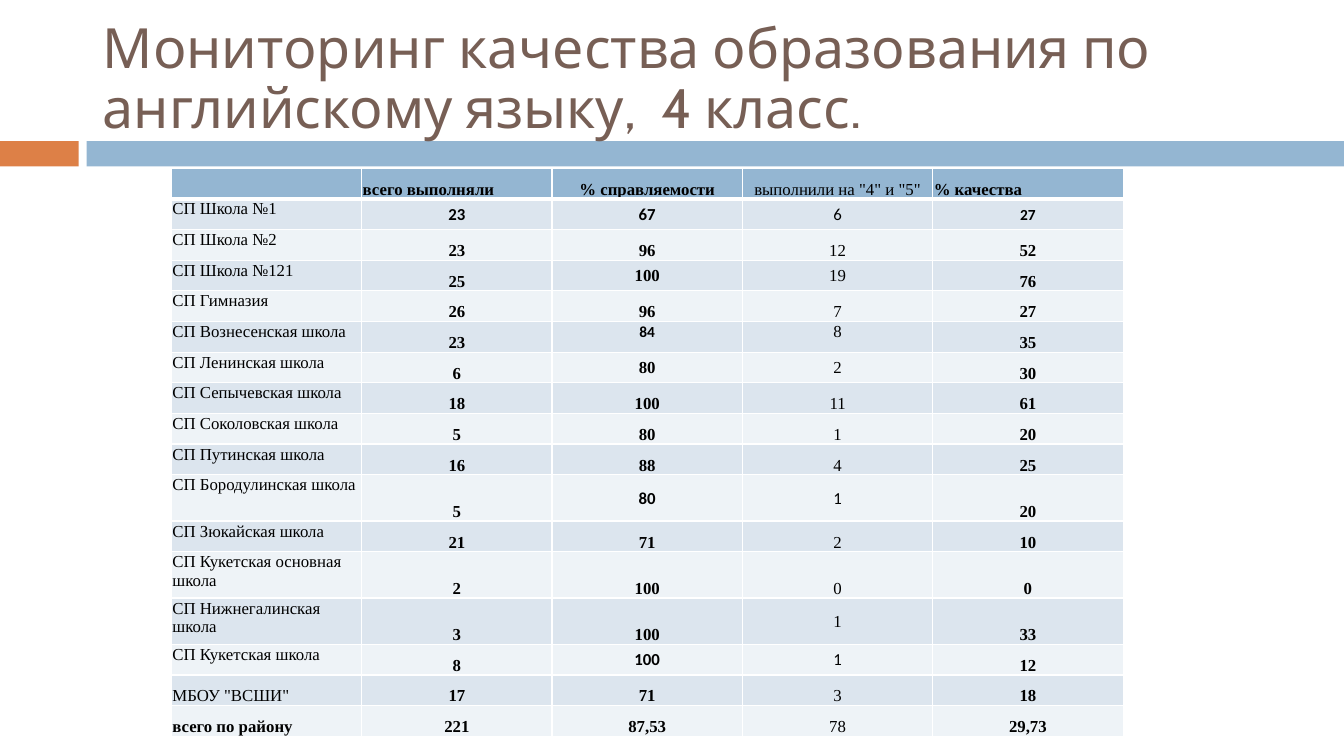
from dataclasses import dataclass, field

from lxml.etree import SubElement
from pptx import Presentation
from pptx.dml.color import RGBColor
from pptx.enum.shapes import MSO_SHAPE
from pptx.enum.text import MSO_ANCHOR, MSO_AUTO_SIZE, PP_ALIGN
from pptx.oxml.ns import qn
from pptx.slide import Slide
from pptx.table import _Cell
from pptx.util import Inches, Pt

ORANGE = RGBColor(0xDD, 0x80, 0x47)
BLUE = RGBColor(0x94, 0xB6, 0xD2)
BROWN = RGBColor(0x77, 0x5F, 0x55)
BLACK = RGBColor(0, 0, 0)
BAND_DARK = RGBColor(0xDC, 0xE5, 0xEE)
BAND_LIGHT = RGBColor(0xEE, 0xF3, 0xF7)
WHITE = RGBColor(0xFF, 0xFF, 0xFF)

SERIF, SANS = "Times New Roman", "Calibri"
TOP, MIDDLE, BOTTOM = MSO_ANCHOR.TOP, MSO_ANCHOR.MIDDLE, MSO_ANCHOR.BOTTOM
TABLE_W, TABLE_H, TALL_ROW = 9.44, 5.64, 0.46
PLAIN_COLUMN = 3


@dataclass(frozen=True)
class Style:
    anchor: MSO_ANCHOR = BOTTOM
    font: str = SERIF
    size: int = 12
    bold: bool = True
    align: PP_ALIGN = PP_ALIGN.CENTER


@dataclass(frozen=True)
class School:
    name: str
    values: tuple[str, ...]
    tall: bool = False
    styles: dict[int, Style] = field(default_factory=dict)


NAME = Style(TOP, bold=False, align=PP_ALIGN.LEFT)
CENTRE = Style(MIDDLE)
CENTRE_SANS = Style(MIDDLE, SANS)
MIDDLE_PAIR = {2: CENTRE, 3: CENTRE}
SANS_PAIR = {2: CENTRE_SANS, 3: CENTRE_SANS}
JUSTIFIED = Style(align=PP_ALIGN.JUSTIFY)

HEADER = School("", ("всего выполняли", "% справляемости", 'выполнили на "4" и "5"', "% качества"),
                styles={1: JUSTIFIED, 4: JUSTIFIED})
SCHOOLS = [
    School("СП Школа №1", ("23", "67", "6", "27"),
           styles={1: CENTRE_SANS, **SANS_PAIR, 4: Style(MIDDLE, SANS, 11)}),
    School("СП Школа №2", ("23", "96", "12", "52")),
    School("СП Школа №121", ("25", "100", "19", "76"), styles=MIDDLE_PAIR),
    School("СП Гимназия", ("26", "96", "7", "27")),
    School("СП Вознесенская школа", ("23", "84", "8", "35"),
           styles={2: Style(TOP, SANS, 11), 3: Style(TOP)}),
    School("СП Ленинская школа", ("6", "80", "2", "30"), styles=MIDDLE_PAIR),
    School("СП Сепычевская школа", ("18", "100", "11", "61")),
    School("СП Соколовская школа", ("5", "80", "1", "20")),
    School("СП Путинская школа", ("16", "88", "4", "25")),
    School("СП Бородулинская школа", ("5", "80", "1", "20"), tall=True, styles=SANS_PAIR),
    School("СП Зюкайская школа", ("21", "71", "2", "10")),
    School("СП Кукетская основная школа", ("2", "100", "0", "0"), tall=True),
    School("СП Нижнегалинская школа", ("3", "100", "1", "33"), tall=True, styles={3: CENTRE}),
    School("СП Кукетская школа", ("8", "100", "1", "12"), styles=SANS_PAIR),
    School('МБОУ "ВСШИ"', ("17", "71", "3", "18"),
           styles={0: Style(bold=False, align=PP_ALIGN.LEFT)}),
    School("всего по району", ("221", "87,53", "78", "29,73"),
           styles={0: Style(align=PP_ALIGN.LEFT)}),
]


def add_bar(s: Slide, left: float, width: float, color: RGBColor) -> None:
    sp = s.shapes.add_shape(MSO_SHAPE.RECTANGLE, Inches(left), Inches(1.4), Inches(width), Inches(0.25))
    sp.shadow.inherit = False
    sp.fill.solid()
    sp.fill.fore_color.rgb = color
    sp.line.fill.background()


def set_title(s: Slide, text: str) -> None:
    title = s.shapes.title
    title.left, title.top, title.width, title.height = map(Inches, (0.92, 0.25, 11.5, 1.1))
    tf = title.text_frame
    tf.word_wrap = True
    tf.auto_size = MSO_AUTO_SIZE.NONE
    tf.vertical_anchor = MIDDLE
    p = tf.paragraphs[0]
    p.alignment = PP_ALIGN.LEFT
    p.line_spacing = 0.9
    r = p.add_run()
    r.text = text
    r.font.name, r.font.size = "Cabin", Pt(39.6)
    r.font.color.rgb = BROWN


def set_borders(cell: _Cell, row: int) -> None:
    """White 1 pt grid with a 3 pt line under the header."""
    tc_pr = cell._tc.get_or_add_tcPr()
    widths = {"L": 1, "R": 1, "T": 3 if row == 1 else 1, "B": 3 if row == 0 else 1}
    for side, width in widths.items():
        line = SubElement(tc_pr, qn(f"a:ln{side}"), w=str(Pt(width)))
        fill = SubElement(line, qn("a:solidFill"))
        SubElement(fill, qn("a:srgbClr"), val=str(WHITE))


def fill_cell(cell: _Cell, text: str, style: Style, bold: bool, color: RGBColor) -> None:
    cell.fill.solid()
    cell.fill.fore_color.rgb = color
    cell.margin_left = cell.margin_right = cell.margin_top = Inches(0.01)
    cell.margin_bottom = 0
    cell.vertical_anchor = style.anchor
    p = cell.text_frame.paragraphs[0]
    p.alignment = style.align
    if not text:
        SubElement(p._p, qn("a:endParaRPr"), sz=str(style.size * 100))
        return
    r = p.add_run()
    r.text = text
    r.font.name, r.font.size, r.font.bold = style.font, Pt(style.size), bold
    r.font.color.rgb = BLACK


def add_results(s: Slide) -> None:
    records = [HEADER, *SCHOOLS]
    columns = 1 + len(HEADER.values)
    tall_count = sum(rec.tall for rec in records)
    row_height = (TABLE_H - tall_count * TALL_ROW) / (len(records) - tall_count)
    table = s.shapes.add_table(len(records), columns, Inches(1.7), Inches(1.67),
                               Inches(TABLE_W), Inches(TABLE_H)).table
    for column in table.columns:
        column.width = Inches(TABLE_W / columns)
    for i, rec in enumerate(records):
        table.rows[i].height = Inches(TALL_ROW if rec.tall else row_height)
        color = BLUE if i == 0 else BAND_DARK if i % 2 else BAND_LIGHT
        for j, text in enumerate((rec.name, *rec.values)):
            style = rec.styles.get(j, Style() if j else NAME)
            cell = table.cell(i, j)
            set_borders(cell, i)
            fill_cell(cell, text, style, style.bold and j != PLAIN_COLUMN, color)


def main() -> None:
    prs = Presentation()
    prs.slide_width, prs.slide_height = Inches(13.33), Inches(7.5)
    s = prs.slides.add_slide(prs.slide_layouts[5])
    add_bar(s, 0, 0.78, ORANGE)
    add_bar(s, 0.86, 12.47, BLUE)
    set_title(s, "Мониторинг качества образования по английскому языку,  4 класс.")
    # The title overlaps the bars, so it goes in front of them.
    s.shapes._spTree.append(s.shapes.title._element)
    add_results(s)
    prs.save("out.pptx")


if __name__ == "__main__":
    main()
